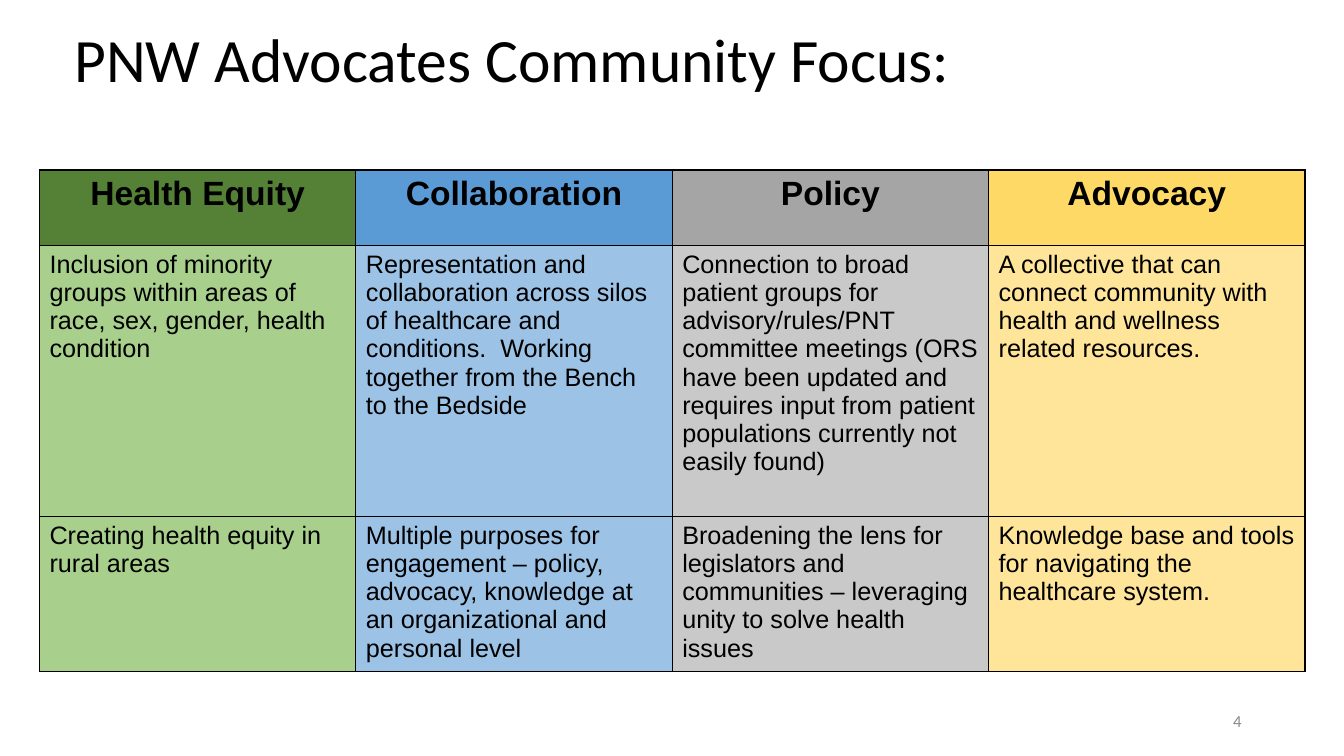
"""Build the community focus slide with its four-column table."""
from lxml.etree import SubElement
from pptx import Presentation
from pptx.dml.color import RGBColor
from pptx.enum.text import MSO_ANCHOR, PP_ALIGN
from pptx.oxml.ns import qn
from pptx.util import Pt

BLACK = RGBColor(0x00, 0x00, 0x00)
GREY = RGBColor(0x88, 0x88, 0x88)
HEADER_FILLS = [
    RGBColor(0x54, 0x81, 0x35),
    RGBColor(0x5B, 0x9B, 0xD5),
    RGBColor(0xA5, 0xA5, 0xA5),
    RGBColor(0xFF, 0xD9, 0x66),
]
BODY_FILLS = [
    RGBColor(0xA8, 0xD0, 0x8C),
    RGBColor(0x9C, 0xC2, 0xE5),
    RGBColor(0xC9, 0xC9, 0xC9),
    RGBColor(0xFE, 0xE5, 0x99),
]
FOCUS_ROWS = [
    ["Health Equity", "Collaboration", "Policy", "Advocacy"],
    [
        "Inclusion of minority groups within areas of race, sex, gender, health condition",
        "Representation and collaboration across silos of healthcare and conditions.  "
        "Working together from the Bench to the Bedside",
        "Connection to broad patient groups for advisory/rules/PNT committee meetings "
        "(ORS have been updated and requires input from patient populations currently "
        "not easily found)",
        "A collective that can connect community with health and wellness related resources.",
    ],
    [
        "Creating health equity in rural areas",
        "Multiple purposes for engagement – policy, advocacy, knowledge at an "
        "organizational and personal level",
        "Broadening the lens for legislators and communities – leveraging unity to "
        "solve health issues",
        "Knowledge base and tools for navigating the healthcare system.",
    ],
]


class FocusPage:
    heading_font = "Calibri"
    table_font = "Arial"

    def __init__(self, deck):
        self.page = deck.slides.add_slide(deck.slide_layouts[5])

    def set_text(self, frame, text, font, size, color=BLACK, bold=False, align=PP_ALIGN.LEFT):
        frame.text = text
        frame.word_wrap = True
        para = frame.paragraphs[0]
        para.alignment = align
        span = para.runs[0]
        span.font.name = font
        span.font.size = Pt(size)
        span.font.bold = bold
        span.font.color.rgb = color
        return para

    def title(self, text, left, top, width, height):
        box = self.page.shapes.title
        box.left, box.top, box.width, box.height = Pt(left), Pt(top), Pt(width), Pt(height)
        box.text_frame.vertical_anchor = MSO_ANCHOR.MIDDLE
        para = self.set_text(box.text_frame, text, self.heading_font, 44)
        para.line_spacing = 0.9

    def border(self, cell):
        properties = cell._tc.get_or_add_tcPr()
        for position, side in enumerate(("a:lnL", "a:lnR", "a:lnT", "a:lnB")):
            line = SubElement(properties, qn(side), w=str(Pt(1)))
            fill = SubElement(line, qn("a:solidFill"))
            SubElement(fill, qn("a:srgbClr"), val=str(BLACK))
            properties.insert(position, line)

    def table(self, rows, left, top, column_width, row_heights):
        columns = len(rows[0])
        frame = self.page.shapes.add_table(
            len(rows), columns, Pt(left), Pt(top),
            Pt(column_width * columns), Pt(sum(row_heights)))
        grid = frame.table
        grid.first_row = grid.horz_banding = False
        for column in grid.columns:
            column.width = Pt(column_width)
        for index, (texts, height) in enumerate(zip(rows, row_heights)):
            grid.rows[index].height = Pt(height)
            header = index == 0
            fills = HEADER_FILLS if header else BODY_FILLS
            for cell, text, color in zip(grid.rows[index].cells, texts, fills):
                cell.fill.solid()
                cell.fill.fore_color.rgb = color
                self.border(cell)
                self.set_text(cell.text_frame, text, self.table_font, 24 if header else 18,
                              bold=header, align=PP_ALIGN.CENTER if header else PP_ALIGN.LEFT)

    def page_number(self, text, left, top, width, height):
        box = self.page.shapes.add_textbox(Pt(left), Pt(top), Pt(width), Pt(height))
        box.text_frame.vertical_anchor = MSO_ANCHOR.MIDDLE
        self.set_text(box.text_frame, text, self.heading_font, 12, GREY, align=PP_ALIGN.RIGHT)


def main():
    deck = Presentation()
    deck.slide_width, deck.slide_height = Pt(960), Pt(540)
    focus = FocusPage(deck)
    focus.title("PNW Advocates Community Focus:", 46, 0, 735, 90)
    focus.table(FOCUS_ROWS, 28.2, 121.5, 226, [53.8, 193.6, 110.8])
    focus.page_number("4", 678, 500.5, 216, 28.8)
    deck.save("out.pptx")


if __name__ == "__main__":
    main()
